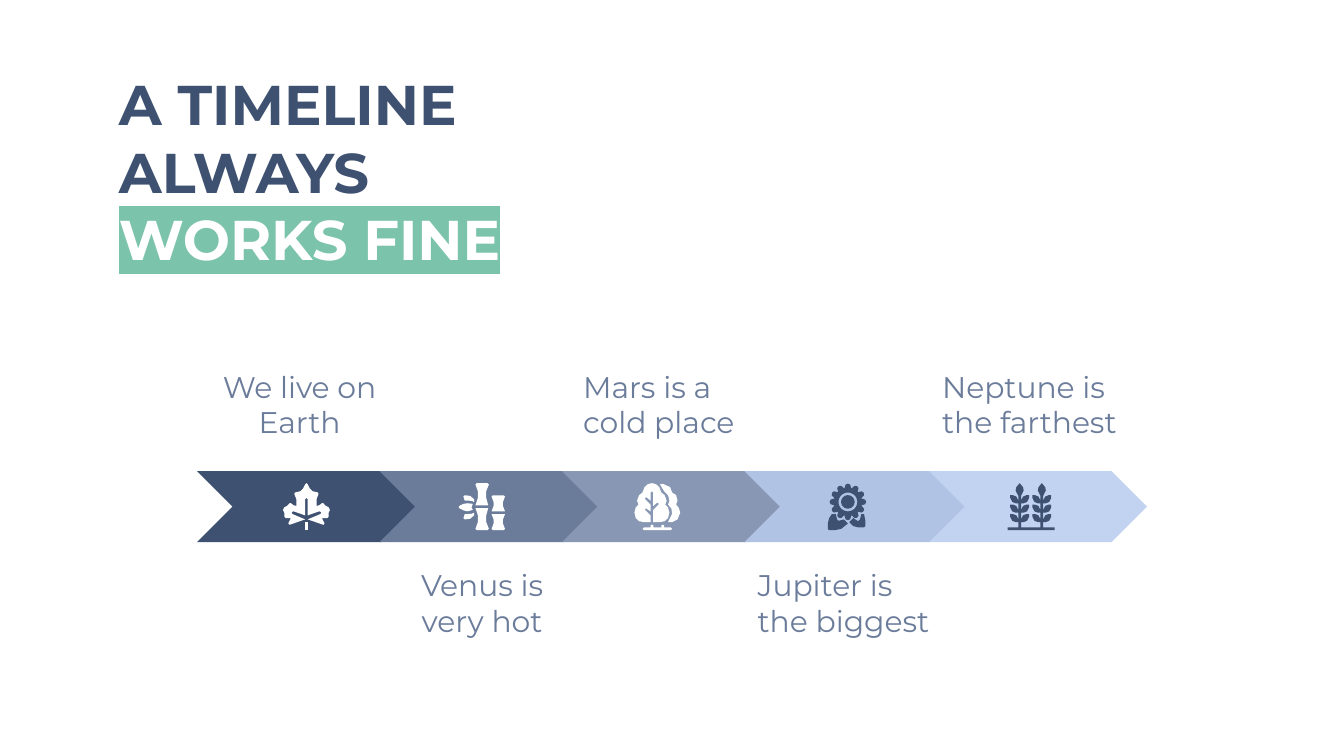
from math import cos, pi, sin

from lxml.etree import SubElement
from pptx import Presentation
from pptx.dml.color import RGBColor
from pptx.enum.shapes import MSO_SHAPE
from pptx.enum.text import MSO_ANCHOR, PP_ALIGN
from pptx.oxml.ns import qn
from pptx.util import Emu, Inches, Pt

FONT = "Montserrat"
NAVY, SLATE, WHITE, GREEN = "3F5170", "6B7C9B", "FFFFFF", "7BC3AA"
CELL = Inches(10) // 100  # the slide is a grid of 100 columns
ICON_UNITS = 35           # icons are drawn on a 35 x 35 grid
ICON_SIZE = 3.5


def rgb(value):
    return RGBColor.from_string(value)


def grid(*values):
    return [Emu(round(v * CELL)) for v in values]


def paint(sp, color):
    sp.shadow.inherit = False
    sp.fill.solid()
    sp.fill.fore_color.rgb = rgb(color)
    sp.line.fill.background()


def format_run(r, color, **values):
    for name, value in {"name": FONT, **values}.items():
        setattr(r.font, name, value)
    r.font.color.rgb = rgb(color)


def set_frame(tf):
    frame = {"word_wrap": True, "vertical_anchor": MSO_ANCHOR.TOP}
    frame.update({f"margin_{side}": Inches(0.1) for side in ("left", "right", "top", "bottom")})
    for name, value in frame.items():
        setattr(tf, name, value)


# Icon outlines: each icon is a list of parts, each part a list of contours
def flip_x(points, total):
    return [(total - x, y) for x, y in points]


def flip_y(points, total):
    return [(x, total - y) for x, y in points]


def block(x, y, w, h):
    return [(x, y), (x + w, y), (x + w, y + h), (x, y + h)]


def ring(cx, cy, radii, count):
    """Points round a centre, going through the given radii in turn."""
    return [(cx + radii[i % len(radii)] * sin(2 * pi * i / count),
             cy - radii[i % len(radii)] * cos(2 * pi * i / count)) for i in range(count)]


def maple_leaf():
    half = [(17.5, 0), (16.5, 1), (15, 4), (13, 6), (9, 7), (8.5, 8), (10, 12), (10, 17), (8, 16.5),
            (6, 15), (5, 15), (3, 17), (1, 18), (0, 20), (1, 22), (1, 25), (2, 26), (6, 26),
            (4, 30), (5, 31), (16.5, 27), (7, 23), (6.5, 21.5), (8, 21), (16.5, 24),
            (16.5, 12), (17.5, 11)]
    return [[block(16.5, 29, 2, 6)], [half + flip_x(half, 35)[::-1]]]


def bamboo():
    leaf = [(12, 22), (10, 22.8), (7, 23), (5, 23), (4, 26), (5, 27), (9, 26.5), (12, 24)]
    middle = [(7, 15), (4, 15.5), (1, 17), (0.5, 18), (1, 18.7), (4, 20.3), (7, 21),
              (11, 20), (10, 18), (11, 15.5)]
    tall = [(13, 18.5), (14.8, 24), (14.8, 29), (13, 34), (14, 35), (22, 35), (23, 34),
            (21, 29), (21, 24), (22.5, 18.5)]
    short = [(25, 23), (26.5, 27), (26.5, 30), (25, 34), (26, 35), (34, 35), (35, 34),
             (33.5, 30), (33.5, 27), (35, 23)]
    return [[leaf], [flip_y(leaf, 36)], [middle], [tall], [flip_y(tall, 35)],
            [flip_y(short, 44)], [short]]


def trees():
    front = [(13, 0), (10, 0.8), (7.5, 3), (6, 7), (3.5, 9), (2, 13), (3, 16), (1, 18), (0, 22),
             (1, 26), (3.5, 28.3), (7, 29), (12, 29), (12, 24), (8, 20), (8, 19), (9, 19), (12, 21),
             (12, 16), (8, 12), (8, 11), (9, 10.5), (12, 13), (12, 7), (13, 6), (14, 7),
             (14, 17), (17, 14.5), (18, 15), (18, 16), (14, 20), (14, 29), (19, 29),
             (22.5, 28.3), (25, 26), (26, 22), (25, 18), (23, 16), (24, 13), (22.5, 9),
             (20, 7), (18.5, 3), (16, 0.8)]
    back = [(21, 0.5), (19, 1), (22, 6), (25, 9), (26, 13), (25, 16), (27.5, 19), (28, 23),
            (25, 29), (28, 29), (32, 27), (34, 22), (33, 18.5), (31, 16), (32, 13), (31, 9),
            (28, 7), (26.5, 3)]
    ground = [(12, 31), (12, 33), (7, 33), (6, 34), (7, 35), (27, 35), (28, 34), (27, 33),
              (22, 33), (22, 31), (20, 31), (20, 33), (14, 33), (14, 31)]
    return [[front], [ground], [back]]


def sunflower():
    left = [(3, 23), (1, 26), (0, 30), (0, 34), (1, 35), (5, 35), (10, 34), (15, 30), (12, 27),
            (8, 28), (7, 27), (6, 23)]
    right = [(27, 23), (25, 23), (24, 27), (23, 28), (22, 28), (19, 26), (16, 29), (19, 32),
             (23, 33), (27, 33), (28, 32), (28, 28)]
    petals = ring(15, 14, (13.6, 13, 10.2, 13), 48)
    return [[ring(15, 14, (5,), 32)], [petals, ring(15, 14, (7,), 32)], [left], [right]]


def wheat():
    contours = [block(0, 33, ICON_UNITS, 2)]
    for x in (9, 25.5):
        contours += [[(x, 0), (x - 2.5, 3), (x - 3, 5.5), (x - 1, 9.5), (x + 1, 9.5),
                      (x + 3, 5.5), (x + 2.5, 3)], block(x - 1, 9.5, 2, 23.5)]
        for y in (9, 16, 23):
            blade = [(x - 7, y), (x - 7, y + 2), (x - 5.5, y + 5), (x - 3, y + 6),
                     (x - 1, y + 6), (x - 1, y + 4), (x - 2.5, y + 1), (x - 5, y)]
            contours += [blade, flip_x(blade, 2 * x)]
    return [contours]


def add_icon(slide, parts, x, y, color):
    scale = ICON_SIZE / ICON_UNITS
    shapes = slide.shapes.add_group_shape().shapes if len(parts) > 1 else slide.shapes
    for contours in parts:
        builder = None
        for contour in contours:
            points = [tuple(grid(x + px * scale, y + py * scale)) for px, py in contour]
            if builder is None:
                builder = shapes.build_freeform(*points[0], scale=1.0)
            else:
                builder.move_to(*points[0])
            builder.add_line_segments(points[1:], close=True)
        paint(builder.convert_to_shape(), color)


def add_title(slide, lines, x, y, w, h):
    title = slide.shapes.title
    title.left, title.top, title.width, title.height = grid(x, y, w, h)
    tf = title.text_frame
    set_frame(tf)
    for i, (text, color, highlight) in enumerate(lines):
        p = tf.paragraphs[0] if i == 0 else tf.add_paragraph()
        p.alignment = PP_ALIGN.LEFT
        r = p.add_run()
        r.text = text
        format_run(r, color, size=Pt(30), bold=True)
        if highlight:
            props = r.font._element
            mark = SubElement(props, qn("a:highlight"))
            SubElement(mark, qn("a:srgbClr"), val=highlight)
            props.find(qn("a:solidFill")).addnext(mark)


def add_label(slide, text, align, x, y, w, h):
    tf = slide.shapes.add_textbox(*grid(x, y, w, h)).text_frame
    set_frame(tf)
    p = tf.paragraphs[0]
    p.alignment = align
    r = p.add_run()
    r.text = text
    format_run(r, SLATE, size=Pt(16))


def add_timeline(slide, steps, x, y, w, h):
    overlap = 2.8
    step_w = (w + overlap * (len(steps) - 1)) / len(steps)
    pitch = step_w - overlap
    lefts = [x + i * pitch for i in range(len(steps))]
    # Arrow band, the fourth arrow lying over the fifth
    for i in (0, 1, 2, 4, 3):
        sp = slide.shapes.add_shape(MSO_SHAPE.CHEVRON, *grid(lefts[i], y, step_w, h))
        sp.adjustments[0] = 0.5
        paint(sp, steps[i][0])
    # Icons on the band, labels above and below in turn
    for i, (_, icon, icon_color, icon_dx, text, align, label_dx) in enumerate(steps):
        add_icon(slide, icon(), lefts[i] + icon_dx, y + (h - ICON_SIZE) / 2, icon_color)
        label_y = y - 8.65 if i % 2 == 0 else y + 6.12
        add_label(slide, text, align, lefts[i] + label_dx, label_y, 15.3, 7.8)


def main():
    prs = Presentation()
    prs.slide_width, prs.slide_height = grid(100, 56.25)
    slide = prs.slides.add_slide(prs.slide_layouts[5])
    center, left = PP_ALIGN.CENTER, PP_ALIGN.LEFT
    add_title(slide, [("A TIMELINE ALWAYS", NAVY, None), ("WORKS FINE", WHITE, GREEN)],
              7.85, 4.2, 42.1, 13.2)
    # Arrow colour, icon, its colour and shift, label, its alignment and shift
    steps = [
        (NAVY, maple_leaf, WHITE, 6.4, "We live on Earth", center, 0),
        (SLATE, bamboo, WHITE, 5.85, "Venus is very hot", center, 0),
        ("8897B3", trees, WHITE, 5.4, "Mars is a cold place", left, 0.6),
        ("B0C3E4", sunflower, NAVY, 6.2, "Jupiter is the biggest", left, 0),
        ("C2D3F1", wheat, NAVY, 6, "Neptune is the farthest", left, 0.15),
    ]
    add_timeline(slide, steps, 14.65, 35.05, 70.7, 5.3)
    prs.save("out.pptx")


if __name__ == "__main__":
    main()
